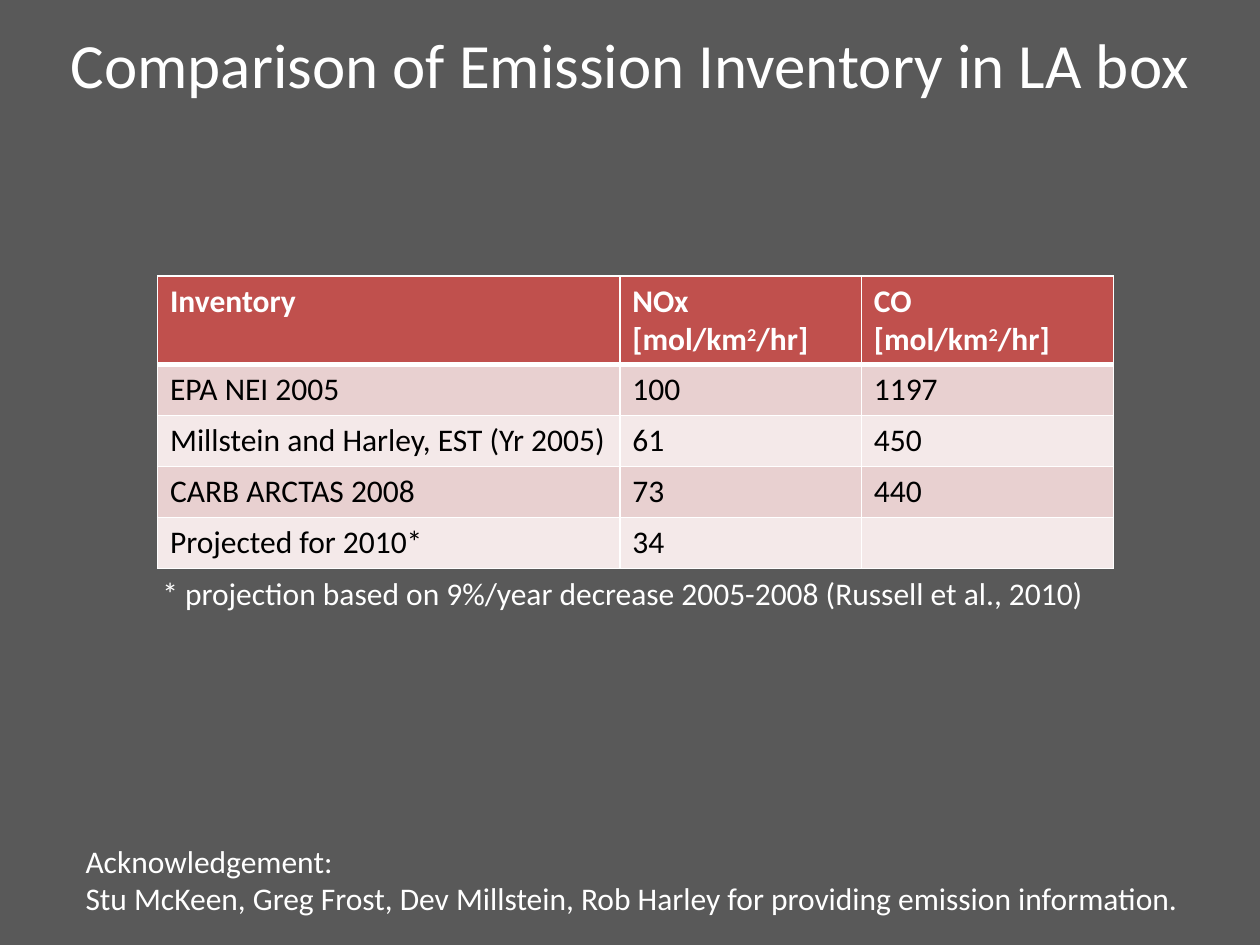
from lxml import etree
from pptx import Presentation
from pptx.dml.color import RGBColor
from pptx.enum.text import MSO_ANCHOR, MSO_AUTO_SIZE, PP_ALIGN
from pptx.oxml.ns import qn
from pptx.util import Pt

LEFT, CENTER = PP_ALIGN.LEFT, PP_ALIGN.CENTER
TOP, MIDDLE = MSO_ANCHOR.TOP, MSO_ANCHOR.MIDDLE
GROW = MSO_AUTO_SIZE.SHAPE_TO_FIT_TEXT

GRAY = RGBColor(0x59, 0x59, 0x59)
WHITE = RGBColor(0xFF, 0xFF, 0xFF)
BLACK = RGBColor(0x00, 0x00, 0x00)
RED = RGBColor(0xC0, 0x50, 0x4D)
ROSE = RGBColor(0xE8, 0xD0, 0xD0)
PALE = RGBColor(0xF4, 0xE9, 0xE9)

FONT = "Calibri"
UNIT = "[mol/km^2^/hr]"
COLS = [264.2, 138, 144]
HEAD, ROW = 50.4, 29.2
ROWS = [
    [["Inventory"], ["NOx", UNIT], ["CO", UNIT]],
    [["EPA NEI 2005"], ["100"], ["1197"]],
    [["Millstein and Harley, EST (Yr 2005)"], ["61"], ["450"]],
    [["CARB ARCTAS 2008"], ["73"], ["440"]],
    [["Projected for 2010*"], ["34"], [""]],
]


def write(frame, lines, size, color, bold=False, align=LEFT):
    for i, line in enumerate(lines):
        para = frame.add_paragraph() if i else frame.paragraphs[0]
        para.alignment = align
        font = para.font
        font.name, font.size, font.bold = FONT, Pt(size), bold
        font.color.rgb = color
        for j, part in enumerate(line.split("^")):
            run = para.add_run()
            run.text = part
            if j % 2:
                run.font._element.set("baseline", "30000")


def add_text(slide, box, lines, size=18, align=LEFT, anchor=TOP, wrap=True, grow=True):
    frame = slide.shapes.add_textbox(*map(Pt, box)).text_frame
    frame.word_wrap = wrap
    frame.vertical_anchor = anchor
    if grow:
        frame.auto_size = GROW
    write(frame, lines, size, WHITE, align=align)


def add_edges(cell, widths):
    props = cell._tc.get_or_add_tcPr()
    for side, width in widths.items():
        line = etree.SubElement(props, qn(f"a:ln{side}"), w=str(Pt(width)))
        fill = etree.SubElement(line, qn("a:solidFill"))
        etree.SubElement(fill, qn("a:srgbClr"), val=str(WHITE))


def add_grid(slide, left, top):
    high = HEAD + ROW * (len(ROWS) - 1)
    frame = slide.shapes.add_table(
        len(ROWS), len(COLS), Pt(left), Pt(top), Pt(sum(COLS)), Pt(high))
    table = frame.table
    for col, width in zip(table.columns, COLS):
        col.width = Pt(width)
    for r, row in enumerate(ROWS):
        table.rows[r].height = Pt(ROW if r else HEAD)
        back = (ROSE if r % 2 else PALE) if r else RED
        for c, lines in enumerate(row):
            cell = table.cell(r, c)
            add_edges(cell, {"L": 1, "R": 1, "T": 3 if r == 1 else 1, "B": 1 if r else 3})
            cell.fill.solid()
            cell.fill.fore_color.rgb = back
            write(cell.text_frame, lines, 18, BLACK if r else WHITE, bold=r == 0)


def main():
    deck = Presentation()
    deck.slide_width, deck.slide_height = Pt(720), Pt(540)
    slide = deck.slides.add_slide(deck.slide_layouts[6])
    slide.background.fill.solid()
    slide.background.fill.fore_color.rgb = GRAY
    add_text(slide, (0, 0, 720, 72), ["Comparison of Emission Inventory in LA box"],
             size=36, align=CENTER, anchor=MIDDLE, grow=False)
    add_grid(slide, 90, 157.7)
    add_text(slide, (85.7, 324.7, 547.2, 29),
             ["* projection based on 9%/year decrease 2005-2008 (Russell et al., 2010)"],
             wrap=False)
    add_text(slide, (41.8, 477.4, 660.2, 51),
             ["Acknowledgement:",
              "Stu McKeen, Greg Frost, Dev Millstein, Rob Harley for providing "
              "emission information."])
    deck.save("out.pptx")


if __name__ == "__main__":
    main()
